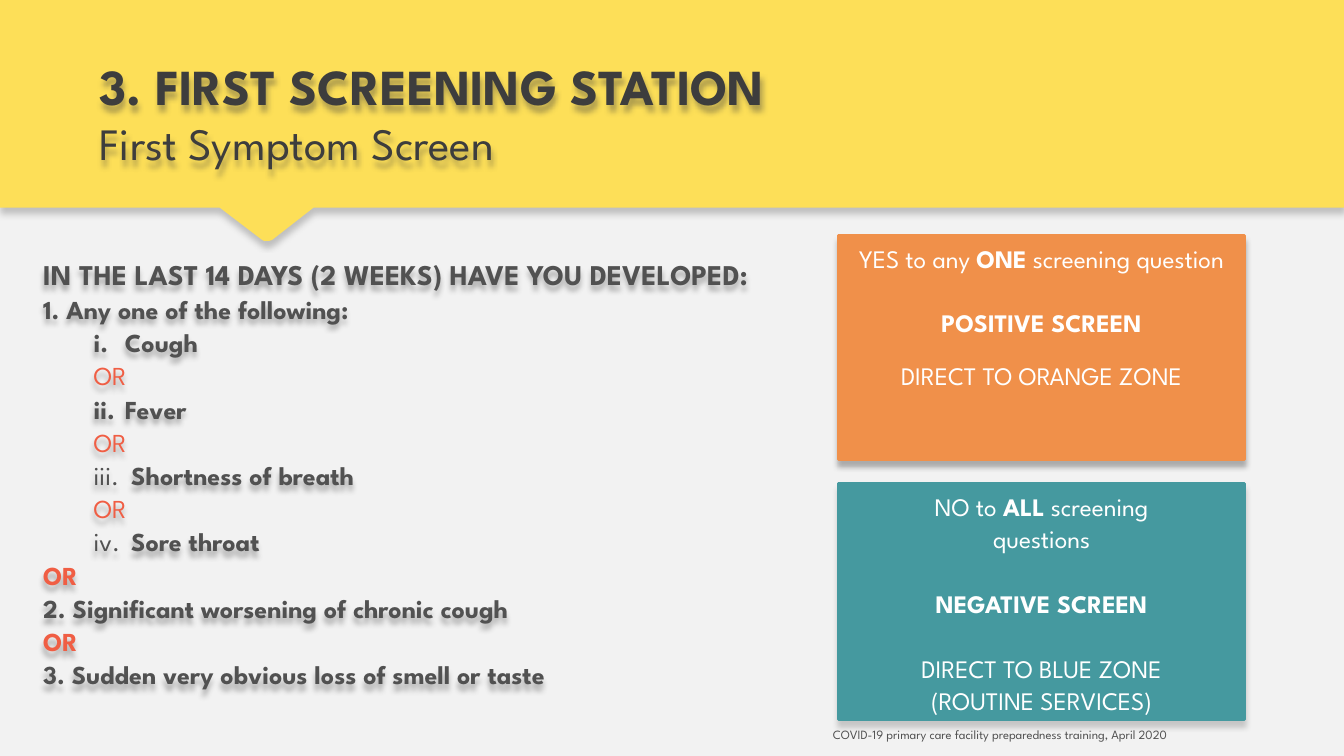
"""Build the first screening station slide with its questions and two outcomes."""
from lxml import etree
from pptx import Presentation
from pptx.dml.color import RGBColor
from pptx.enum.shapes import MSO_SHAPE
from pptx.enum.text import MSO_ANCHOR, PP_ALIGN
from pptx.oxml.ns import qn
from pptx.util import Inches, Pt

RECT = MSO_SHAPE.RECTANGLE
TOP, MIDDLE, BOTTOM = MSO_ANCHOR.TOP, MSO_ANCHOR.MIDDLE, MSO_ANCHOR.BOTTOM
CENTER, RIGHT = PP_ALIGN.CENTER, PP_ALIGN.RIGHT
PALE = RGBColor(0xF2, 0xF2, 0xF2)
YELLOW = RGBColor(0xFD, 0xDF, 0x58)
DARK = RGBColor(0x3D, 0x3D, 0x3D)
GRAY = RGBColor(0x51, 0x51, 0x51)
RED = RGBColor(0xF0, 0x5E, 0x44)
ORANGE = RGBColor(0xF0, 0x90, 0x4A)
TEAL = RGBColor(0x45, 0x99, 0x9F)
WHITE = RGBColor(0xFF, 0xFF, 0xFF)
FONT = "League Spartan"


def shade(shape, alpha):
    shape.shadow.inherit = False
    effects = shape._element.spPr.find(qn("a:effectLst"))
    outer = etree.SubElement(effects, qn("a:outerShdw"), blurRad=str(Pt(4)),
                             dist=str(Pt(4)), dir="5400000", algn="t", rotWithShape="0")
    color = etree.SubElement(outer, qn("a:srgbClr"), val=str(DARK))
    etree.SubElement(color, qn("a:alpha"), val=str(alpha * 1000))


def write(para, parts, size, color):
    for text, bold in parts:
        run = para.add_run()
        run.text = text
        run.font.name = FONT
        run.font.size = Pt(size)
        run.font.bold = bold
        run.font.color.rgb = color


deck = Presentation()
deck.slide_width, deck.slide_height = Inches(13.33), Inches(7.5)
slide = deck.slides.add_slide(deck.slide_layouts[6])
slide.background.fill.solid()
slide.background.fill.fore_color.rgb = PALE
shapes = slide.shapes

edge = [(0, 0), (0, 2.06), (2.18, 2.06), (2.6, 2.38), (2.62, 2.39), (2.67, 2.39),
        (2.7, 2.38), (3.11, 2.06), (13.33, 2.06)]
pen = shapes.build_freeform(Inches(13.33), 0)
pen.add_line_segments([(Inches(x), Inches(y)) for x, y in edge])
banner = pen.convert_to_shape()
banner.fill.solid()
banner.fill.fore_color.rgb = YELLOW
banner.line.fill.background()
shade(banner, 27)

frames = []
for left, top, width, height, anchor, alpha in [
    (0.89, 0.67, 12.11, 1.06, BOTTOM, 40),
    (0.33, 2.34, 10.48, 4.77, MIDDLE, 40),
    (2.22, 7.01, 9.45, 0.4, BOTTOM, 0),
]:
    box = shapes.add_textbox(Inches(left), Inches(top), Inches(width), Inches(height))
    box.text_frame.word_wrap = True
    box.text_frame.vertical_anchor = anchor
    if alpha:
        shade(box, alpha)
    frames.append(box.text_frame)
title, body, foot = frames

head = title.paragraphs[0]
write(head, [("3. FIRST SCREENING STATION", True)], 36, DARK)
head.add_line_break()
write(head, [("First Symptom Screen", False)], 32, DARK)

foot.paragraphs[0].alignment = RIGHT
write(foot.paragraphs[0], [("COVID-19 primary care facility preparedness training, April 2020", False)],
      9, GRAY)

lead = body.paragraphs[0]
lead.line_spacing = 0.87
write(lead, [("IN THE LAST 14 DAYS (2 WEEKS) HAVE YOU DEVELOPED:", True)], 20.4, GRAY)
signs = [
    [("Cough", True)],
    [("Fever", True)],
    [(" ", False), ("Shortness of breath", True)],
    [(" ", False), ("Sore throat", True)],
]
rows = [([("1. Any one of the following:", True)], GRAY, 0, 0)]
for count, sign in enumerate(signs, 1):
    if count > 1:
        rows.append(([("OR", False)], RED, 0.5, 0))
    rows.append((sign, GRAY, 0.81, count))
for text in ["2. Significant worsening of chronic cough",
             "3. Sudden very obvious loss of smell or taste"]:
    rows += [([("OR", True)], RED, 0, 0), ([(text, True)], GRAY, 0, 0)]
for parts, color, left, count in rows:
    para = body.add_paragraph()
    para.line_spacing = 0.9
    para.space_before = Pt(3.7)
    props = para._p.get_or_add_pPr()
    props.set("marL", str(Inches(left)))
    if count:
        props.set("indent", str(Inches(-0.31)))
        tint = etree.SubElement(props, qn("a:buClr"))
        etree.SubElement(tint, qn("a:srgbClr"), val=str(GRAY))
        etree.SubElement(props, qn("a:buAutoNum"), type="romanLcPeriod", startAt=str(count))
    write(para, parts, 18.5, color)

cards = [
    (2.34, 2.22, ORANGE, 39, [
        ([("YES to any ", False), ("ONE", True), (" screening question", False)], 0),
        ([("POSITIVE SCREEN", True)], 23.2),
        ([("DIRECT TO ORANGE ZONE", False)], 14.2)]),
    (4.8, 2.34, TEAL, 24, [
        ([("NO to ", False), ("ALL", True), (" screening", False)], 0),
        ([("questions", False)], 0),
        ([("NEGATIVE SCREEN", True)], 23.2),
        ([("DIRECT TO BLUE ZONE", False)], 23.2),
        ([("(ROUTINE SERVICES)", False)], 0)]),
]
for top, height, color, alpha, lines in cards:
    card = shapes.add_shape(RECT, Inches(8.32), Inches(top), Inches(4.02), Inches(height))
    card.fill.solid()
    card.fill.fore_color.rgb = color
    card.line.color.rgb = color
    card.line.width = Pt(2)
    shade(card, alpha)
    frame = card.text_frame
    frame.word_wrap = True
    frame.vertical_anchor = TOP
    for index, (parts, gap) in enumerate(lines):
        para = frame.add_paragraph() if index else frame.paragraphs[0]
        para.alignment = CENTER
        para.line_spacing = 1.07
        if gap:
            para.space_before = Pt(gap)
        write(para, parts, 18, WHITE)

deck.save("out.pptx")
